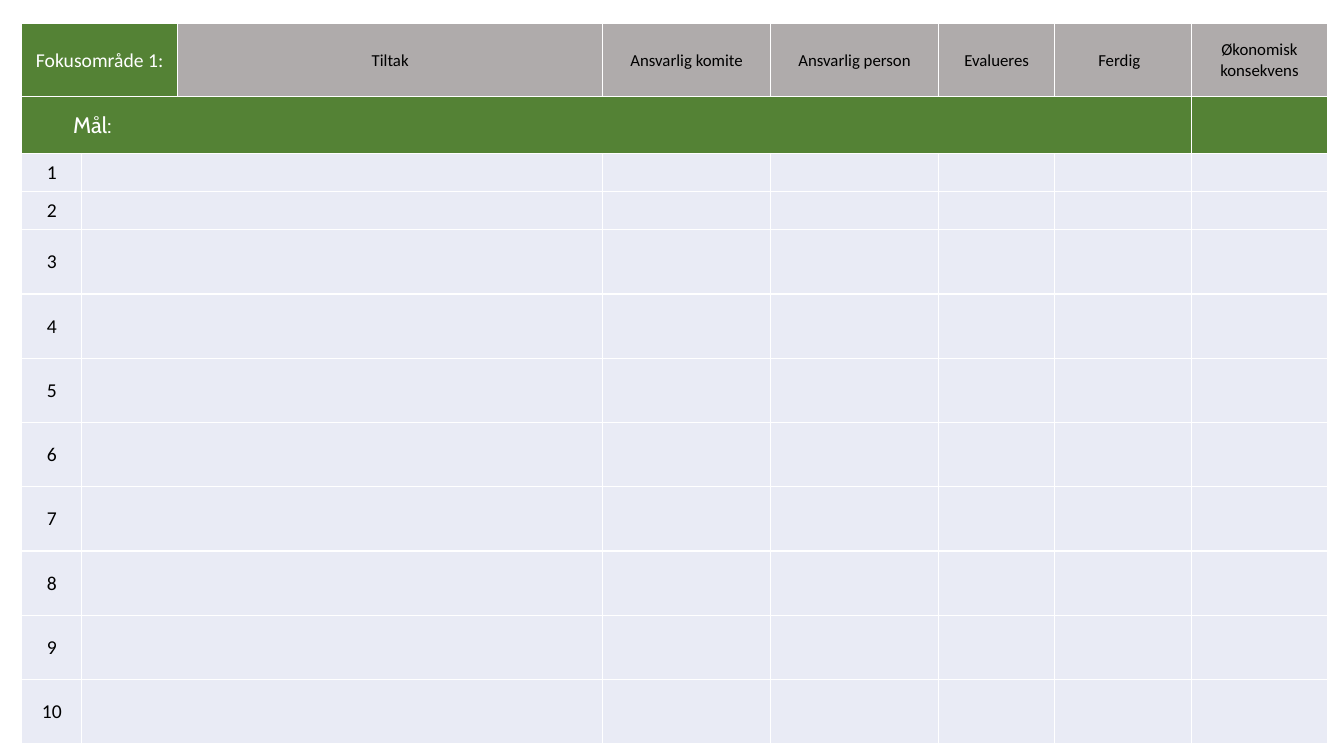
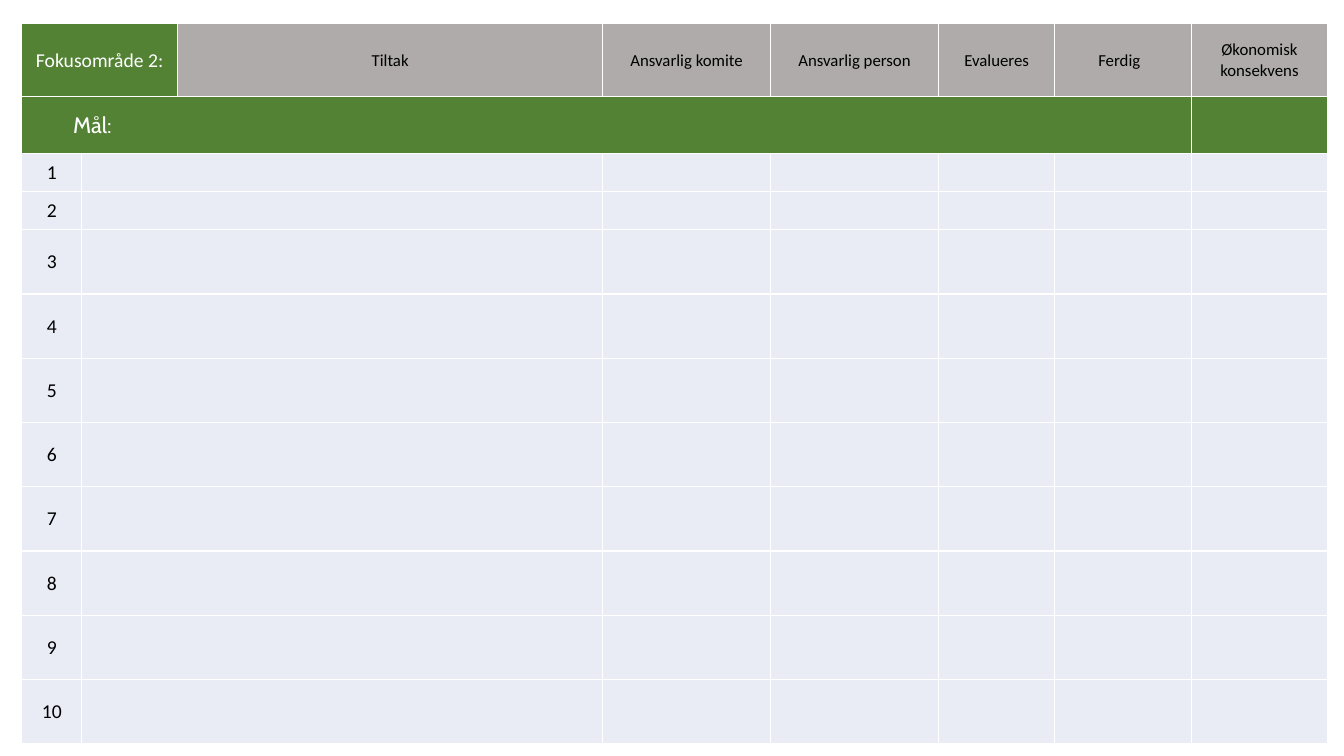
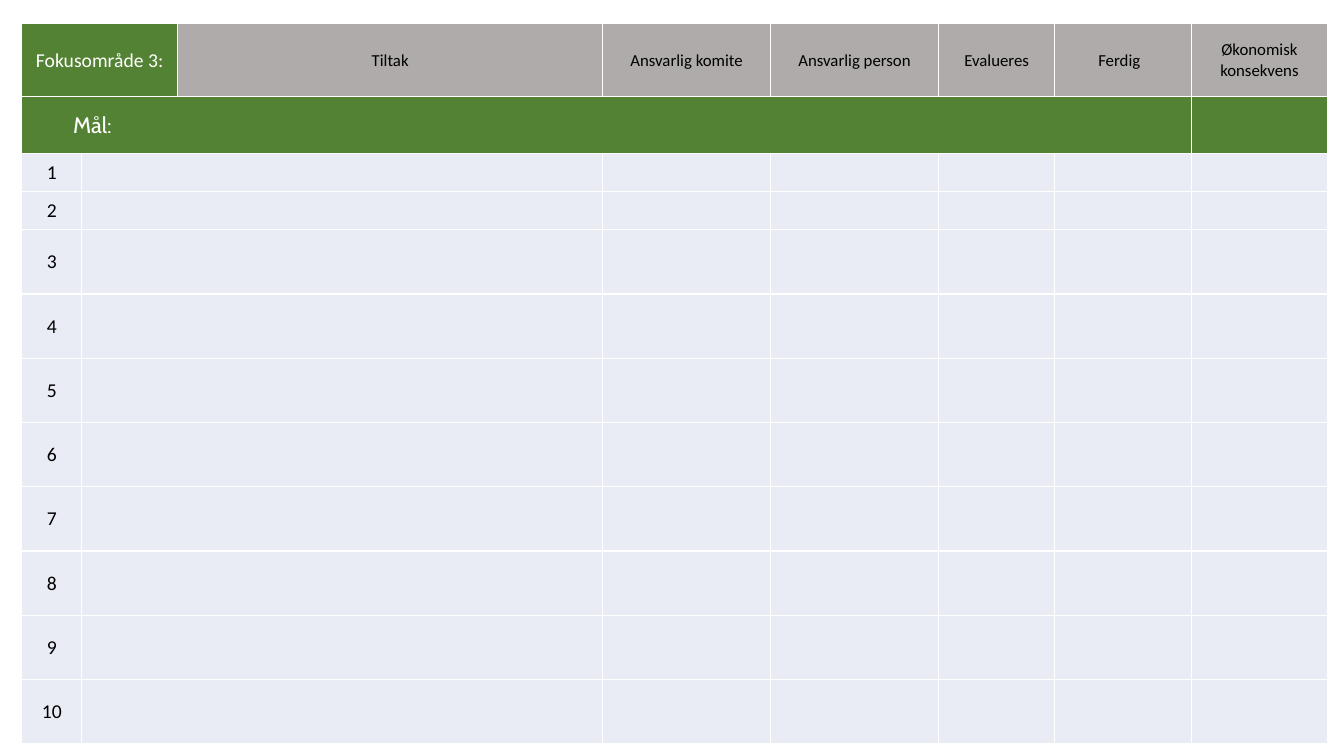
"""Three action plan slides, one table for each focus area."""
from lxml import etree
from pptx import Presentation
from pptx.dml.color import RGBColor
from pptx.enum.text import MSO_ANCHOR, PP_ALIGN
from pptx.oxml.ns import qn
from pptx.util import Pt

MIDDLE = MSO_ANCHOR.MIDDLE
CENTER = PP_ALIGN.CENTER
LEFT = PP_ALIGN.LEFT

GREEN = RGBColor(0x54, 0x82, 0x35)
GRAY = RGBColor(0xAF, 0xAB, 0xAB)
PALE = RGBColor(0xE9, 0xEB, 0xF5)
WHITE = RGBColor(0xFF, 0xFF, 0xFF)
BLACK = RGBColor(0x00, 0x00, 0x00)

FOCUS_AREAS = 3
ACTIONS = 10
HEADINGS = ["Tiltak", "Ansvarlig komite", "Ansvarlig person",
            "Evalueres", "Ferdig", "Økonomisk konsekvens"]
COLUMN_WIDTHS = [43, 68.5, 303.5, 120, 120, 83, 97.5, 97.5]
ROW_HEIGHTS = [52.5, 40.7] + [27.2] * 2 + [45.9] * 8
FERDIG_COLUMN = 6


def style_cell(cell, fill):
    cell.fill.solid()
    cell.fill.fore_color.rgb = fill
    cell.vertical_anchor = MIDDLE
    cell.margin_left = cell.margin_right = cell.margin_top = Pt(0.7)
    cell.margin_bottom = Pt(0)
    properties = cell._tc.get_or_add_tcPr()
    for position, side in enumerate(("a:lnL", "a:lnR", "a:lnT", "a:lnB")):
        line = etree.Element(qn(side), w=str(Pt(1)))
        solid = etree.SubElement(line, qn("a:solidFill"))
        etree.SubElement(solid, qn("a:srgbClr"), val=str(WHITE))
        properties.insert(position, line)


def write_cell(cell, text, size, color, font="Calibri", align=CENTER):
    cell.text_frame.text = text
    para = cell.text_frame.paragraphs[0]
    para.alignment = align
    span = para.runs[0]
    span.font.size = Pt(size)
    span.font.name = font
    span.font.color.rgb = color


deck = Presentation()
deck.slide_width = Pt(960)
deck.slide_height = Pt(540)
blank_layout = deck.slide_layouts[6]

for area in range(1, FOCUS_AREAS + 1):
    page = deck.slides.add_slide(blank_layout)
    frame = page.shapes.add_table(
        len(ROW_HEIGHTS), len(COLUMN_WIDTHS), Pt(15.5), Pt(16.5),
        Pt(sum(COLUMN_WIDTHS)), Pt(sum(ROW_HEIGHTS)))
    table = frame.table
    table.first_row = False
    table.horz_banding = False
    for column, width in zip(table.columns, COLUMN_WIDTHS):
        column.width = Pt(width)
    for row, height in zip(table.rows, ROW_HEIGHTS):
        row.height = Pt(height)

    row_fills = [GRAY, GREEN] + [PALE] * ACTIONS
    for row, fill in zip(table.rows, row_fills):
        for cell in row.cells:
            style_cell(cell, fill)

    area_cell = table.cell(0, 0)
    area_cell.merge(table.cell(0, 1))
    area_cell.fill.fore_color.rgb = GREEN
    write_cell(area_cell, f"Fokusområde {area}:", 14, WHITE)
    for index, heading in enumerate(HEADINGS, start=2):
        write_cell(table.cell(0, index), heading, 12, BLACK)
    table.cell(0, FERDIG_COLUMN).margin_right = Pt(6)

    goal_cell = table.cell(1, 0)
    goal_cell.merge(table.cell(1, 6))
    write_cell(goal_cell, "Mål:", 16, WHITE, "Cabin", LEFT)
    goal = goal_cell.text_frame.paragraphs[0]
    goal.level = 1
    goal._p.get_or_add_pPr().set("marL", str(Pt(36)))
    goal._p.get_or_add_pPr().set("indent", "0")

    for number in range(1, ACTIONS + 1):
        write_cell(table.cell(number + 1, 0), str(number), 14, BLACK)
        table.cell(number + 1, 1).merge(table.cell(number + 1, 2))

deck.save("out.pptx")
